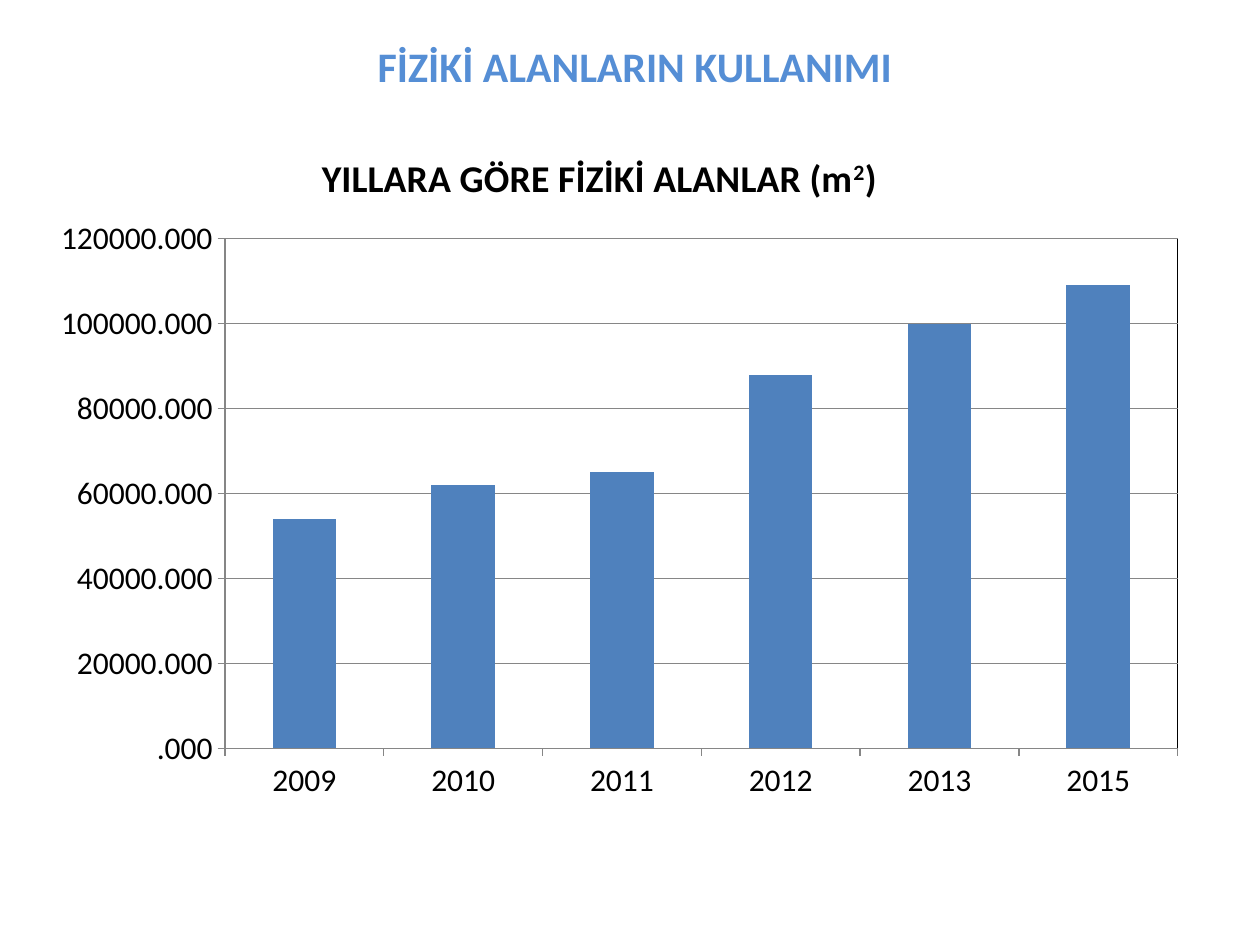
from dataclasses import dataclass

from lxml.etree import SubElement
from pptx import Presentation
from pptx.chart.data import CategoryChartData
from pptx.dml.color import RGBColor as Rgb
from pptx.enum.chart import XL_CHART_TYPE as Kind, XL_TICK_MARK as Tick
from pptx.enum.text import MSO_ANCHOR as Anchor, PP_ALIGN as Align
from pptx.oxml import parse_xml
from pptx.oxml.ns import nsdecls, qn
from pptx.util import Cm, Pt

HEAD = "FİZİKİ ALANLARIN KULLANIMI"
NAME = [("YILLARA GÖRE FİZİKİ ALANLAR (m", False), ("2", True), (")", False)]
AREAS = {"2009": 54000, "2010": 62000, "2011": 65000,
         "2012": 88000, "2013": 100000, "2015": 109000}

# left, top, width, height in cm
HEAD_BOX = (1.27, 0.53, 23.06, 1.6)
CHART_BOX = (0.79, 2.59, 23.42, 13.89)
# shares of the chart's own width and height
NAME_AT = {"x": 0.24, "y": 0.03}
PLOT_AT = {"x": 0.16, "y": 0.16, "w": 0.82, "h": 0.74}


@dataclass(frozen=True)
class Theme:
    font: str = "Calibri"
    head: Rgb = Rgb(0x55, 0x8E, 0xD5)
    bar: Rgb = Rgb(0x4F, 0x81, 0xBD)
    text: Rgb = Rgb(0, 0, 0)
    grid: Rgb = Rgb(0x86, 0x86, 0x86)
    head_size: float = 24
    name_size: float = 21.6
    text_size: float = 18


THEME = Theme()


def style(font, size, color, bold=False):
    font.name, font.size, font.bold = THEME.font, Pt(size), bold
    font.color.rgb = color


def place(part, spots, inner=False):
    """Give a chart part a manual layout in shares of the chart."""
    box = part.find(qn("c:layout"))
    if box is None:
        box = parse_xml(f"<c:layout {nsdecls('c')}/>")
        text = part.find(qn("c:tx"))
        part.insert(0 if text is None else part.index(text) + 1, box)
    for old in list(box):
        box.remove(old)
    man = SubElement(box, qn("c:manualLayout"))
    rows = [("layoutTarget", "inner")] if inner else []
    rows += [(f"{key}Mode", "edge") for key in "xy"]
    rows += list(spots.items())
    for tag, val in rows:
        SubElement(man, qn(f"c:{tag}")).set("val", str(val))


def add_head(slide):
    head = slide.shapes.title
    head.left, head.top, head.width, head.height = map(Cm, HEAD_BOX)
    frame = head.text_frame
    frame.text = HEAD
    frame.vertical_anchor = Anchor.MIDDLE
    par = frame.paragraphs[0]
    par.alignment = Align.CENTER
    style(par.font, THEME.head_size, THEME.head, True)


def add_name(chart):
    chart.has_title = True
    title = chart.chart_title
    title.include_in_layout = False
    par = title.text_frame.paragraphs[0]
    style(par.font, THEME.name_size, THEME.text, True)
    for text, high in NAME:
        run = par.add_run()
        run.text = text
        style(run.font, THEME.name_size, THEME.text, True)
        if high:
            run.font._element.set("baseline", "30000")
    place(chart._chartSpace.chart.find(qn("c:title")), NAME_AT)


def add_bars(slide):
    data = CategoryChartData()
    data.categories = list(AREAS)
    data.add_series("Series 1", list(AREAS.values()))
    chart = slide.shapes.add_chart(
        Kind.COLUMN_CLUSTERED, *map(Cm, CHART_BOX), data).chart
    chart.has_legend = False
    style(chart.font, THEME.text_size, THEME.text)
    add_name(chart)

    plot = chart.plots[0]
    plot.gap_width, plot.vary_by_categories = 150, False
    fill = plot.series[0].format.fill
    fill.solid()
    fill.fore_color.rgb = THEME.bar

    vals = chart.value_axis
    vals.minimum_scale, vals.maximum_scale, vals.major_unit = 0, 120000, 20000
    vals.has_major_gridlines = True
    vals.tick_labels.number_format = "#.##0"
    vals.tick_labels.number_format_is_linked = False
    cats = chart.category_axis
    for axis in (vals, cats):
        axis.major_tick_mark = Tick.OUTSIDE
    for part in (vals, cats, vals.major_gridlines):
        part.format.line.color.rgb = THEME.grid
        part.format.line.width = Pt(0.75)

    area = chart._chartSpace.chart.plotArea
    place(area, PLOT_AT, inner=True)
    area.append(parse_xml(
        f"<c:spPr {nsdecls('c', 'a')}><a:noFill/><a:ln w='9525'><a:solidFill>"
        f"<a:srgbClr val='{THEME.text}'/></a:solidFill></a:ln></c:spPr>"))


def main():
    deck = Presentation()
    deck.slide_width, deck.slide_height = Cm(25.4), Cm(19.05)
    slide = deck.slides.add_slide(deck.slide_layouts.get_by_name("Title Only"))
    add_head(slide)
    add_bars(slide)
    deck.save("out.pptx")


if __name__ == "__main__":
    main()
